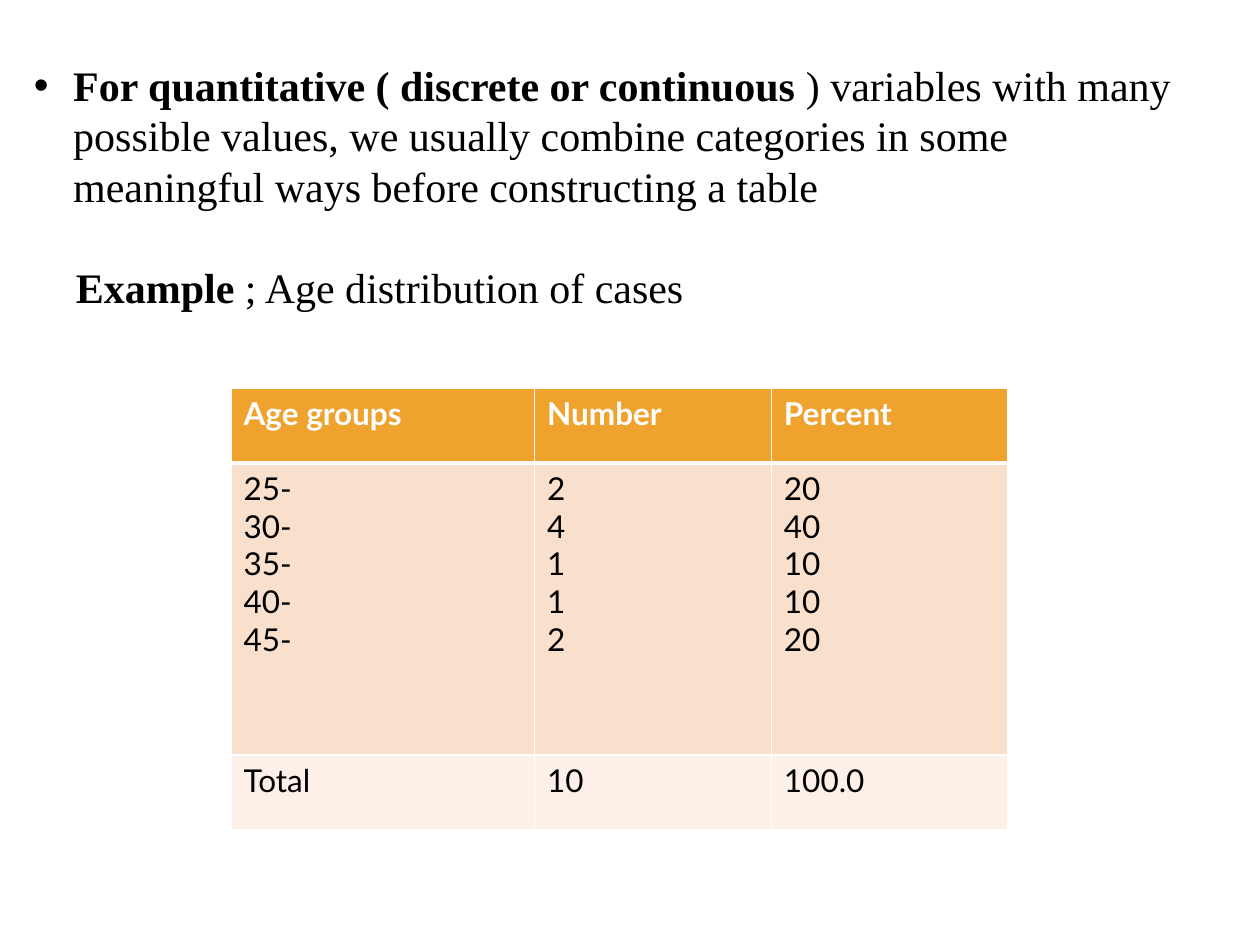
from dataclasses import dataclass

from lxml import etree
from pptx import Presentation
from pptx.dml.color import RGBColor
from pptx.enum.text import MSO_ANCHOR
from pptx.oxml.ns import qn
from pptx.util import Pt

TOP = MSO_ANCHOR.TOP
BLANK_LAYOUT = 6


@dataclass(frozen=True)
class Theme:
    text: str = "000000"
    white: str = "FFFFFF"
    header: str = "F0A22E"
    band: str = "F9E0CD"
    total: str = "FCF0E8"
    text_font: str = "Times New Roman"
    table_font: str = "Lato"
    text_size: float = 24
    table_size: float = 18
    line_pitch: float = 28.8


@dataclass(frozen=True)
class TextPara:
    strong: str
    plain: str
    left: float
    indent: float = 0
    before: float = 0
    bullet: str = ""


@dataclass(frozen=True)
class TableRow:
    cells: tuple[str, ...]
    height: float
    fill: str
    color: str
    bold: bool = False
    top_line: float = 1
    bottom_line: float = 1


THEME = Theme()

PARAS = [
    TextPara("For quantitative ( discrete or continuous ",
             ") variables with many possible values, we usually combine categories "
             "in some meaningful ways before constructing a table",
             left=22.5, indent=-22.5, bullet="•"),
    TextPara("Example", " ; Age distribution of cases", left=24, before=THEME.line_pitch),
]

# Each line inside a cell is its own paragraph
ROWS = [
    TableRow(("Age groups", "Number", "Percent"), 42.5, THEME.header, THEME.white,
             bold=True, bottom_line=3),
    TableRow(("25-\n30-\n35-\n40-\n45-", "2\n4\n1\n1\n2", "20\n40\n10\n10\n20"),
             167, THEME.band, THEME.text, top_line=3),
    TableRow(("Total", "10", "100.0"), 42.5, THEME.total, THEME.text),
]
COLUMN_WIDTHS = (173.5, 135.3, 135.3)


def format_font(font, name: str, size: float, color: str, bold: bool) -> None:
    for key, value in {"name": name, "size": Pt(size), "bold": bold}.items():
        setattr(font, key, value)
    font.color.rgb = RGBColor.from_string(color)


def set_indent(para, item: TextPara) -> None:
    properties = para._p.get_or_add_pPr()
    properties.set("marL", str(Pt(item.left)))
    properties.set("indent", str(Pt(item.indent)))
    if item.bullet:
        etree.SubElement(properties, qn("a:buFont"), typeface="Arial")
        etree.SubElement(properties, qn("a:buChar"), char=item.bullet)


def add_text(page, items: list[TextPara]) -> None:
    box = page.shapes.add_textbox(Pt(12.24), Pt(30.5), Pt(671.8), Pt(232.6))
    frame = box.text_frame
    frame.word_wrap = True
    for index, item in enumerate(items):
        para = frame.add_paragraph() if index else frame.paragraphs[0]
        para.line_spacing = Pt(THEME.line_pitch)
        para.space_before = Pt(item.before)
        set_indent(para, item)
        for words, bold in ((item.strong, True), (item.plain, False)):
            span = para.add_run()
            span.text = words
            format_font(span.font, THEME.text_font, THEME.text_size, THEME.text, bold)


def add_borders(cell, row: TableRow) -> None:
    properties = cell._tc.get_or_add_tcPr()
    widths = {"lnL": 1, "lnR": 1, "lnT": row.top_line, "lnB": row.bottom_line}
    for side, width in widths.items():
        line = etree.SubElement(properties, qn(f"a:{side}"), w=str(Pt(width)))
        fill = etree.SubElement(line, qn("a:solidFill"))
        etree.SubElement(fill, qn("a:srgbClr"), val=THEME.white)


def fill_cell(cell, words: str, row: TableRow) -> None:
    add_borders(cell, row)
    cell.fill.solid()
    cell.fill.fore_color.rgb = RGBColor.from_string(row.fill)
    cell.vertical_anchor = TOP
    cell.text = words
    for para in cell.text_frame.paragraphs:
        for span in para.runs:
            format_font(span.font, THEME.table_font, THEME.table_size, row.color, row.bold)


def add_age_table(page, rows: list[TableRow]) -> None:
    frame = page.shapes.add_table(
        len(rows), len(COLUMN_WIDTHS), Pt(132), Pt(222),
        Pt(sum(COLUMN_WIDTHS)), Pt(sum(row.height for row in rows)))
    table = frame.table
    for column, width in zip(table.columns, COLUMN_WIDTHS):
        column.width = Pt(width)
    for index, row in enumerate(rows):
        table.rows[index].height = Pt(row.height)
        for cell, words in zip(table.rows[index].cells, row.cells):
            fill_cell(cell, words, row)


def main() -> None:
    deck = Presentation()
    deck.slide_width, deck.slide_height = Pt(720), Pt(540)
    page = deck.slides.add_slide(deck.slide_layouts[BLANK_LAYOUT])

    # Explanation and example line
    add_text(page, PARAS)
    # Age distribution
    add_age_table(page, ROWS)

    deck.save("out.pptx")


if __name__ == "__main__":
    main()
